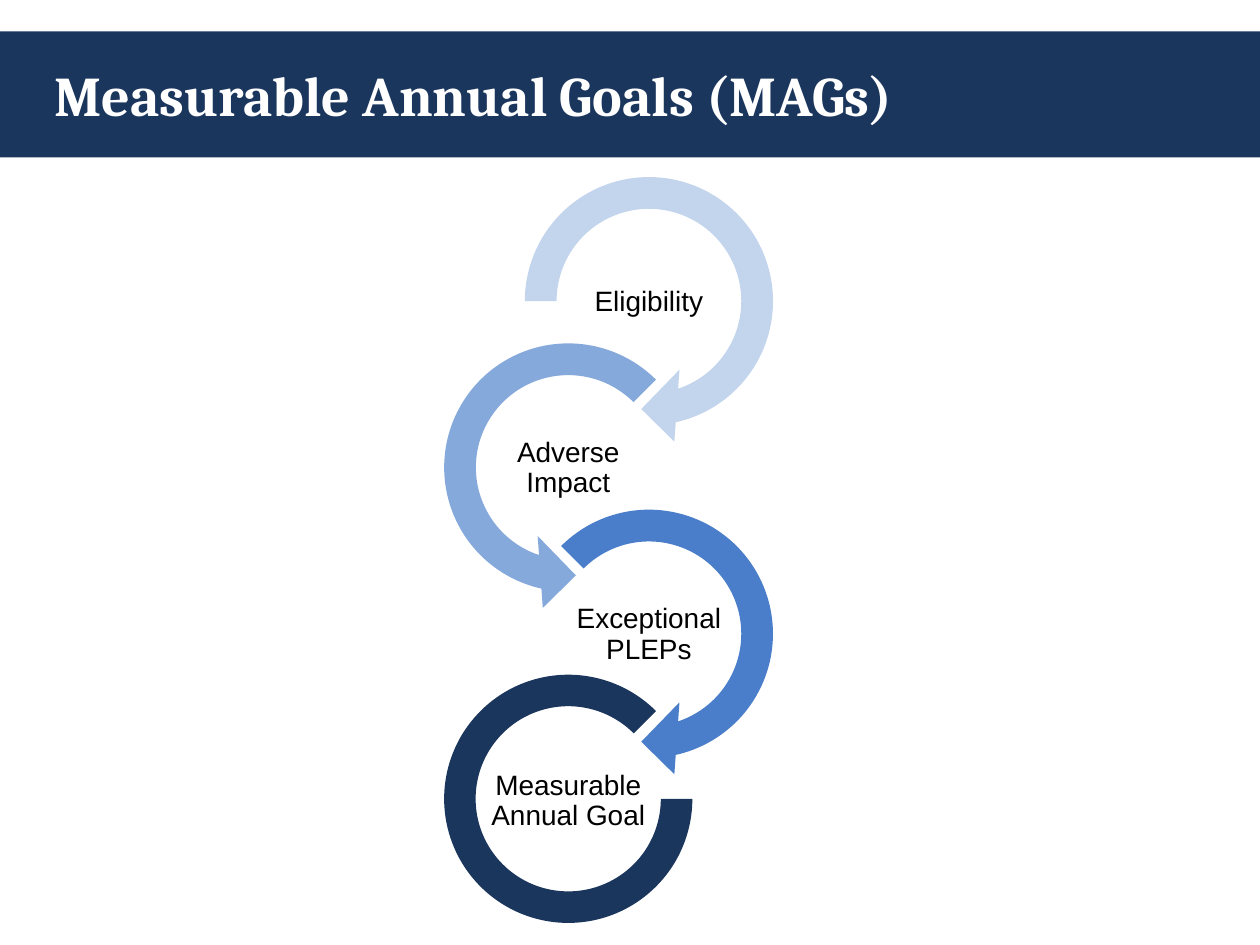
"""Build the Measurable Annual Goals slide with its chain of circular arrows."""
from dataclasses import dataclass

from pptx import Presentation
from pptx import util as u
from pptx.dml.color import RGBColor
from pptx.enum import shapes, text
from pptx.shapes.autoshape import Shape
from pptx.slide import Slide

COLORS = {
    "navy": "1B365D",
    "blue": "4A7ECA",
    "sky": "86A9DC",
    "pale": "C3D4ED",
    "white": "FFFFFF",
    "black": "000000",
}
KIND = shapes.MSO_SHAPE
LEFT_CENTER, RIGHT_CENTER = 4.51, 5.15
FIRST_CENTER, STEP = 2.4, 1.32
ARROW_SIZE, ARC_SIZE = 2.29, 1.97
ARROW_DROP, ARC_DROP = -0.01, -0.02
LABEL_WIDTH, LABEL_HEIGHT = 1.28, 0.64


@dataclass(frozen=True)
class Stage:
    """One ring of the chain and its label."""

    label: str
    kind: KIND
    color: str
    center: float
    size: float
    drop: float
    adjustments: tuple[float, ...]


STAGES = [
    Stage("Eligibility", KIND.CIRCULAR_ARROW, "pale", RIGHT_CENTER, ARROW_SIZE,
          ARROW_DROP, (0.11, 11.423, 45, 108, 0.125)),
    Stage("Adverse Impact", KIND.LEFT_CIRCULAR_ARROW, "sky", LEFT_CENTER, ARROW_SIZE,
          ARROW_DROP, (0.11, 11.423, 63, 189, 0.125)),
    Stage("Exceptional PLEPs", KIND.CIRCULAR_ARROW, "blue", RIGHT_CENTER, ARROW_SIZE,
          ARROW_DROP, (0.11, 11.423, 45, 135, 0.125)),
    Stage("Measurable Annual Goal", KIND.BLOCK_ARC, "navy", LEFT_CENTER, ARC_SIZE,
          ARC_DROP, (0, 189, 0.127)),
]


def add_filled(page: Slide, kind: KIND, left: float, top: float,
               width: float, height: float, color: str) -> Shape:
    """Add a flat preset shape without an outline."""
    shape = page.shapes.add_shape(
        kind, u.Inches(left), u.Inches(top), u.Inches(width), u.Inches(height))
    shape.shadow.inherit = False
    shape.fill.solid()
    shape.fill.fore_color.rgb = RGBColor.from_string(COLORS[color])
    shape.line.fill.background()
    return shape


def write(box: Shape, words: str, font: str, size: int, color: str,
          align: text.PP_ALIGN, bold: bool = False) -> None:
    """Write one vertically centred paragraph into a box."""
    frame = box.text_frame
    frame.word_wrap = True
    frame.vertical_anchor = text.MSO_ANCHOR.MIDDLE
    para = frame.paragraphs[0]
    para.alignment = align
    span = para.add_run()
    span.text = words
    span.font.name = font
    span.font.size = u.Pt(size)
    span.font.bold = bold
    span.font.color.rgb = RGBColor.from_string(COLORS[color])


def add_title(page: Slide, words: str) -> None:
    """Place the title over a full-width band."""
    title = page.shapes.title
    band = add_filled(page, KIND.RECTANGLE, 0, 0.25, 10, 1, "navy")
    title.element.addprevious(band.element)
    title.left, title.top = u.Inches(0.33), u.Inches(0.25)
    title.width, title.height = u.Inches(9.08), u.Inches(1)
    write(title, words, "Cambria", 32, "white", text.PP_ALIGN.LEFT, bold=True)


def add_stage(page: Slide, stage: Stage, middle: float) -> None:
    """Draw a ring and the label inside it."""
    ring = add_filled(page, stage.kind, stage.center - stage.size / 2,
                      middle + stage.drop - stage.size / 2,
                      stage.size, stage.size, stage.color)
    for index, value in enumerate(stage.adjustments):
        ring.adjustments[index] = value
    box = page.shapes.add_textbox(
        u.Inches(stage.center - LABEL_WIDTH / 2), u.Inches(middle - LABEL_HEIGHT / 2),
        u.Inches(LABEL_WIDTH), u.Inches(LABEL_HEIGHT))
    frame = box.text_frame
    frame.margin_left = frame.margin_right = u.Inches(0.01)
    frame.margin_top = frame.margin_bottom = u.Inches(0.01)
    write(box, stage.label, "Arial", 16, "black", text.PP_ALIGN.CENTER)
    frame.paragraphs[0].line_spacing = 0.9


def main() -> None:
    """Build and save the deck."""
    deck = Presentation()
    deck.slide_width, deck.slide_height = u.Inches(10), u.Inches(7.5)
    page = deck.slides.add_slide(deck.slide_layouts.get_by_name("Title Only"))
    add_title(page, "Measurable Annual Goals (MAGs)")
    for index, stage in enumerate(STAGES):
        add_stage(page, stage, FIRST_CENTER + index * STEP)
    deck.save("out.pptx")


if __name__ == "__main__":
    main()
